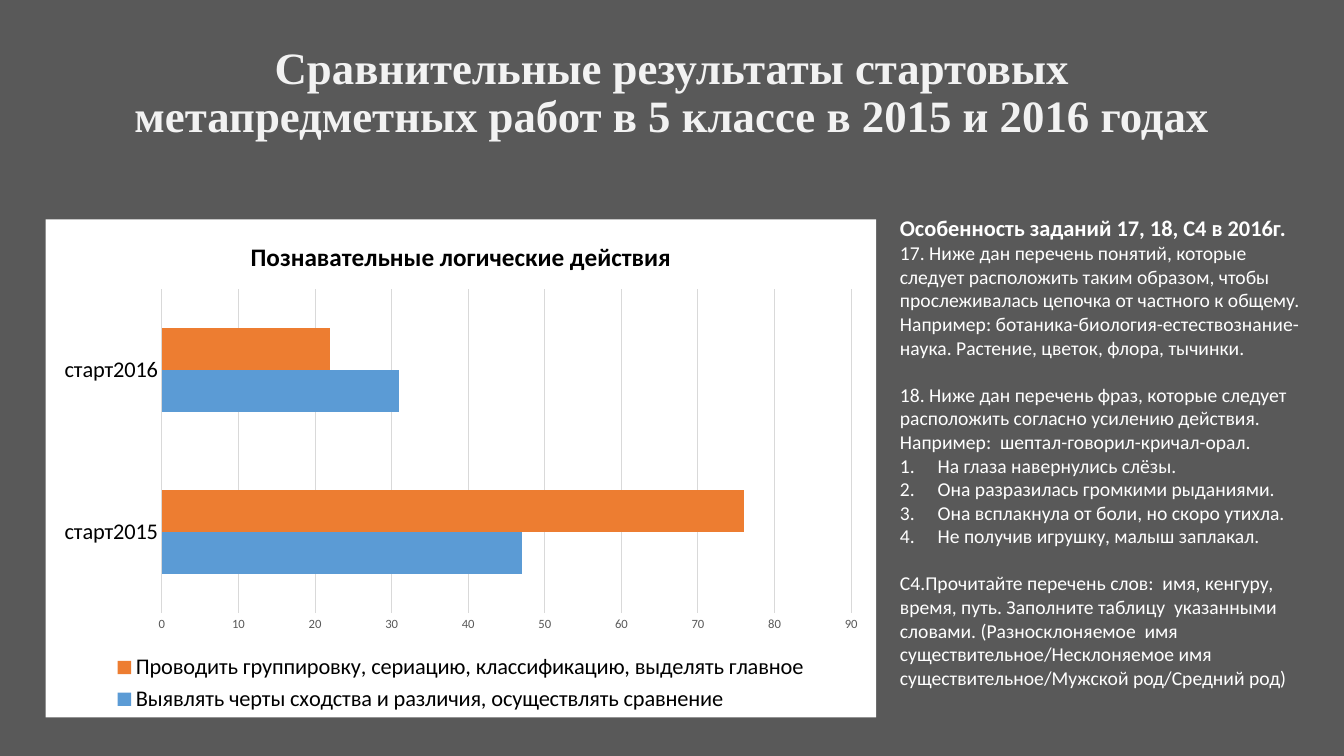
from lxml.etree import SubElement
from pptx import Presentation
from pptx.chart.data import CategoryChartData
from pptx.dml.color import RGBColor
from pptx.enum.chart import XL_CHART_TYPE, XL_LEGEND_POSITION, XL_TICK_MARK
from pptx.enum.text import MSO_ANCHOR, PP_ALIGN
from pptx.oxml import parse_xml
from pptx.oxml.ns import nsdecls, qn
from pptx.util import Cm, Pt

COLORS = {
    "background": "595959",
    "title": "F2F2F2",
    "white": "FFFFFF",
    "black": "000000",
    "grid": "D9D9D9",
    "axis_text": "595959",
    "compare": "5B9BD5",
    "group": "ED7D31",
}
TITLE = "Сравнительные результаты стартовых метапредметных работ в 5 классе в 2015 и 2016 годах"
CHART_TITLE = "Познавательные логические действия"
YEARS = ["старт2015", "старт2016"]
SERIES = [
    ("Выявлять черты сходства и различия, осуществлять сравнение", (47, 31), "compare"),
    ("Проводить группировку, сериацию, классификацию, выделять главное", (76, 22), "group"),
]
TASKS_HEADING = "Особенность заданий 17, 18, С4 в 2016г."
TASK_17 = ("17. Ниже дан перечень понятий, которые следует расположить таким образом, чтобы "
           "прослеживалась цепочка от частного к общему. Например: "
           "ботаника-биология-естествознание-наука. Растение, цветок, флора, тычинки.")
TASK_18 = ("18. Ниже дан перечень фраз, которые следует расположить согласно усилению "
           "действия. Например:  шептал-говорил-кричал-орал.")
PHRASES = [
    "На глаза навернулись слёзы.",
    "Она разразилась громкими рыданиями.",
    "Она всплакнула от боли, но скоро утихла.",
    "Не получив игрушку, малыш заплакал.",
]
TASK_C4 = ("С4.Прочитайте перечень слов:  имя, кенгуру, время, путь. Заполните таблицу  "
           "указанными словами. (Разносклоняемое  имя существительное/Несклоняемое имя "
           "существительное/Мужской род/Средний род)")


def rgb(name):
    return RGBColor.from_string(COLORS[name])


def set_font(font, size, color, bold=False, name="Calibri"):
    font.size, font.bold, font.name = Pt(size), bold, name
    font.color.rgb = rgb(color)


def add_text_frame(slide, box):
    tf = slide.shapes.add_textbox(*box).text_frame
    tf.word_wrap = True
    return tf


def add_title(slide, box):
    tf = add_text_frame(slide, box)
    tf.vertical_anchor = MSO_ANCHOR.MIDDLE
    p = tf.paragraphs[0]
    p.text = TITLE
    p.alignment = PP_ALIGN.CENTER
    p.line_spacing = 0.9
    set_font(p.runs[0].font, 32, "title", True, "Times New Roman")


def fill_chart_area(chart, color):
    area = parse_xml(
        f'<c:spPr {nsdecls("c", "a")}><a:solidFill><a:srgbClr val="{COLORS[color]}"/>'
        '</a:solidFill><a:ln><a:noFill/></a:ln></c:spPr>')
    chart.element.find(qn("c:chart")).addnext(area)


def place_plot(chart, x, y, w, h):
    """Fix the inner plot area, in fractions of the chart."""
    plot_area = chart.element.find(qn("c:chart")).find(qn("c:plotArea"))
    for old in plot_area.findall(qn("c:layout")):
        plot_area.remove(old)
    layout = parse_xml(f'<c:layout {nsdecls("c")}><c:manualLayout/></c:layout>')
    settings = dict(layoutTarget="inner", xMode="edge", yMode="edge", x=x, y=y, w=w, h=h)
    for tag, value in settings.items():
        SubElement(layout[0], qn(f"c:{tag}")).set("val", str(value))
    plot_area.insert(0, layout)


def style_axes(chart):
    years, scale = chart.category_axis, chart.value_axis
    for axis, size, color in ((years, 16, "black"), (scale, 9, "axis_text")):
        axis.major_tick_mark = axis.minor_tick_mark = XL_TICK_MARK.NONE
        set_font(axis.tick_labels.font, size, color)
    years.has_major_gridlines = False
    scale.has_major_gridlines = True
    for line in (years.format.line, scale.major_gridlines.format.line):
        line.color.rgb = rgb("grid")
        line.width = Pt(0.75)
    scale.format.line.fill.background()
    scale.minimum_scale, scale.maximum_scale, scale.major_unit = 0, 90, 10


def add_results_chart(slide, box):
    data = CategoryChartData()
    data.categories = YEARS
    for name, values, _ in SERIES:
        data.add_series(name, values)
    chart = slide.shapes.add_chart(XL_CHART_TYPE.BAR_CLUSTERED, *box, data).chart
    set_font(chart.font, 10, "black")
    fill_chart_area(chart, "white")
    place_plot(chart, 0.14, 0.14, 0.83, 0.65)

    chart.has_title = True
    p = chart.chart_title.text_frame.paragraphs[0]
    p.text = CHART_TITLE
    set_font(p.runs[0].font, 18, "black", True)
    chart.chart_title.include_in_layout = False

    style_axes(chart)
    plot = chart.plots[0]
    plot.gap_width, plot.overlap, plot.vary_by_categories = 182, 0, False
    for series, (_, _, color) in zip(plot.series, SERIES):
        series.format.fill.solid()
        series.format.fill.fore_color.rgb = rgb(color)

    chart.has_legend = True
    chart.legend.position = XL_LEGEND_POSITION.BOTTOM
    chart.legend.include_in_layout = False
    set_font(chart.legend.font, 16, "black")


def number_paragraph(p):
    pPr = p._p.get_or_add_pPr()
    pPr.set("marL", str(Cm(0.95)))
    pPr.set("indent", str(-Cm(0.95)))
    SubElement(pPr, qn("a:buFont")).set("typeface", "+mj-lt")
    SubElement(pPr, qn("a:buAutoNum")).set("type", "arabicPeriod")


def add_tasks(slide, box):
    tf = add_text_frame(slide, box)
    lines = [TASKS_HEADING, TASK_17, TASK_18, *PHRASES, TASK_C4]
    tf.text = "\n".join(lines)
    for p, line in zip(tf.paragraphs, lines):
        heading = line == TASKS_HEADING
        set_font(p.runs[0].font, 16 if heading else 14, "white", heading)
        if line in (TASK_18, TASK_C4):
            p.space_before = Pt(17)
        if line in PHRASES:
            number_paragraph(p)


def main():
    prs = Presentation()
    prs.slide_width, prs.slide_height = Cm(33.87), Cm(19.05)
    slide = prs.slides.add_slide(prs.slide_layouts[6])
    slide.background.fill.solid()
    slide.background.fill.fore_color.rgb = rgb("background")
    add_title(slide, (Cm(2.33), Cm(0.53), Cm(29.21), Cm(3.68)))
    add_results_chart(slide, (Cm(1.15), Cm(5.53), Cm(20.93), Cm(12.55)))
    add_tasks(slide, (Cm(22.43), Cm(5.28), Cm(10.72), Cm(12.32)))
    prs.save("out.pptx")


if __name__ == "__main__":
    main()
